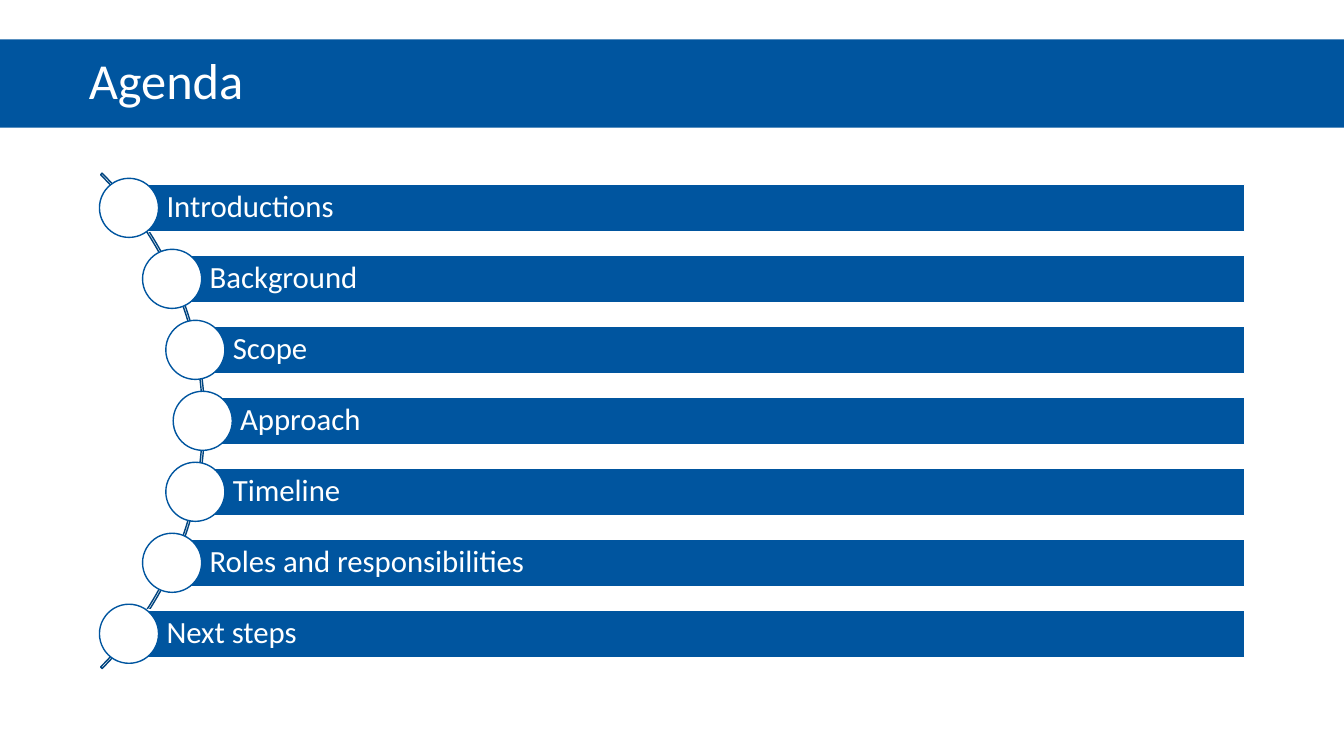
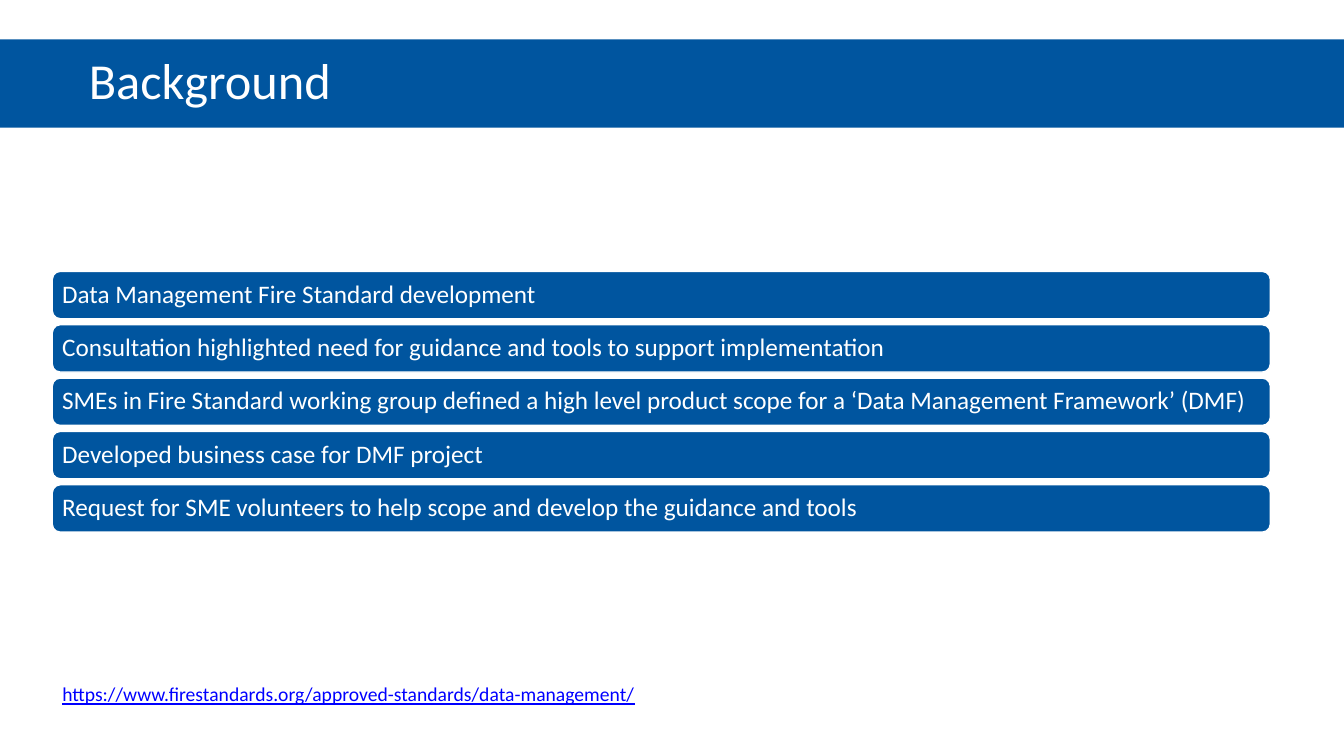
from math import sqrt

from pptx import Presentation
from pptx.dml.color import RGBColor
from pptx.enum import shapes, text
from pptx.util import Pt

BLUE = RGBColor(0x00, 0x55, 0x9F)
DARK_BLUE = RGBColor(0x00, 0x44, 0x7F)
LINK_BLUE = RGBColor(0x00, 0x00, 0xFF)
WHITE = RGBColor(0xFF, 0xFF, 0xFF)
FONT = "Calibri"
SLIDE_WIDTH, SLIDE_HEIGHT = 960, 540
BAR_HEIGHT = 33.8

AGENDA = ["Introductions", "Background", "Scope", "Approach", "Timeline",
          "Roles and responsibilities", "Next steps"]
BACKGROUND = [
    "Data Management Fire Standard development",
    "Consultation highlighted need for guidance and tools to support implementation",
    "SMEs in Fire Standard working group defined a high level product scope for a "
    "‘Data Management Framework’ (DMF)",
    "Developed business case for DMF project",
    "Request for SME volunteers to help scope and develop the guidance and tools",
]
SOURCE = "https://www.firestandards.org/approved-standards/data-management/"


def write(box, content, size, color=WHITE, inset=7.2, spacing=0.9,
          underline=False, wrap=True, anchor=text.MSO_ANCHOR.MIDDLE):
    frame = box.text_frame
    frame.word_wrap = wrap
    frame.vertical_anchor = anchor
    frame.margin_left = Pt(inset)
    frame.margin_right = frame.margin_top = frame.margin_bottom = Pt(4)
    paragraph = frame.paragraphs[0]
    paragraph.alignment = text.PP_ALIGN.LEFT
    paragraph.line_spacing = spacing
    run = paragraph.add_run()
    run.text = content
    run.font.name = FONT
    run.font.size = Pt(size)
    run.font.color.rgb = color
    if underline:
        run.font.underline = True


def add_block(slide, kind, left, top, width, height, fill=None, line=None):
    block = slide.shapes.add_shape(kind, Pt(left), Pt(top), Pt(width), Pt(height))
    block.shadow.inherit = False
    if fill is None:
        block.fill.background()
    else:
        block.fill.solid()
        block.fill.fore_color.rgb = fill
    if line is None:
        block.line.fill.background()
    else:
        block.line.color.rgb = line
        block.line.width = Pt(1)
    return block


def add_titled_slide(deck, title):
    slide = deck.slides.add_slide(deck.slide_layouts[6])
    band = add_block(slide, shapes.MSO_SHAPE.RECTANGLE, 0, 28.2, SLIDE_WIDTH, 62.9, BLUE)
    write(band, title, 36, inset=63.4)
    return slide


def add_agenda(slide, topics):
    middle, pitch, right_edge = 300.6, 50.7, 889
    rail_left, rail_size = -354.2, 500.4
    curve_center, curve_radius = -101.2, 246
    node_size = 42.2

    rail = add_block(slide, shapes.MSO_SHAPE.BLOCK_ARC, rail_left,
                     middle - rail_size / 2, rail_size, rail_size, line=DARK_BLUE)
    for index, value in enumerate((189, 27, 0.0031)):
        rail.adjustments[index] = value

    for index, topic in enumerate(topics):
        offset = (index - (len(topics) - 1) / 2) * pitch
        x = curve_center + sqrt(curve_radius ** 2 - offset ** 2)
        y = middle + offset
        bar = add_block(slide, shapes.MSO_SHAPE.RECTANGLE, x, y - BAR_HEIGHT / 2,
                        right_edge - x, BAR_HEIGHT, BLUE, WHITE)
        write(bar, topic, 22, inset=26.8)
        add_block(slide, shapes.MSO_SHAPE.OVAL, x - node_size / 2, y - node_size / 2,
                  node_size, node_size, WHITE, BLUE)


def add_statements(slide, statements):
    for index, statement in enumerate(statements):
        bar = add_block(slide, shapes.MSO_SHAPE.ROUNDED_RECTANGLE, 37.4,
                        193.9 + index * 38.1, 870, BAR_HEIGHT, BLUE, WHITE)
        write(bar, statement, 18, inset=5.4)


def add_source(slide, address):
    source = slide.shapes.add_textbox(Pt(37.4), Pt(483.1), Pt(430.6), Pt(24.3))
    write(source, address, 14, LINK_BLUE, spacing=1, underline=True, wrap=False,
          anchor=text.MSO_ANCHOR.TOP)


def main():
    deck = Presentation()
    deck.slide_width, deck.slide_height = Pt(SLIDE_WIDTH), Pt(SLIDE_HEIGHT)
    add_agenda(add_titled_slide(deck, "Agenda"), AGENDA)
    background = add_titled_slide(deck, "Background")
    add_statements(background, BACKGROUND)
    add_source(background, SOURCE)
    deck.save("out.pptx")


if __name__ == "__main__":
    main()
